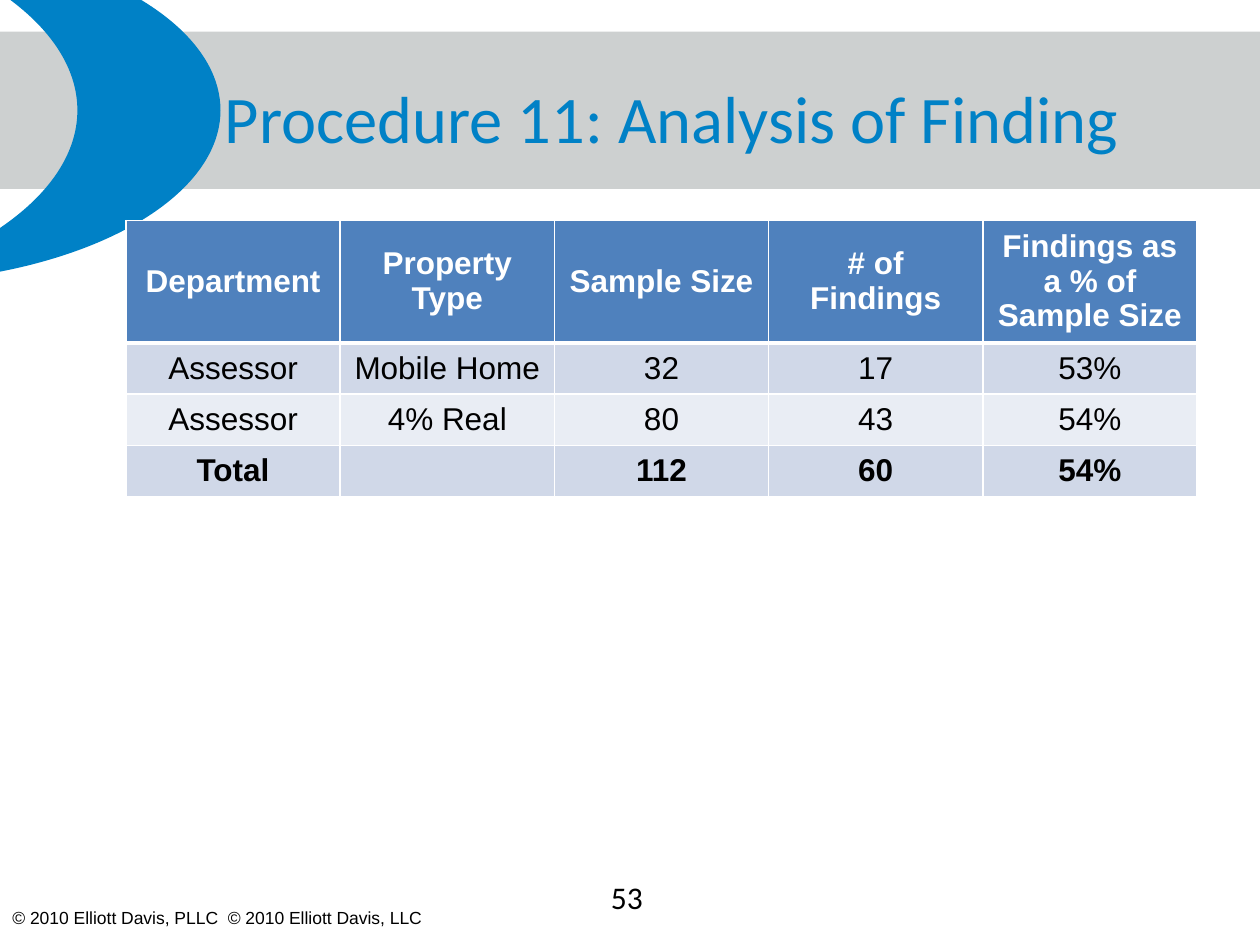
"""Build the Procedure 11 slide: a findings table under a banner with a crescent."""
from dataclasses import dataclass

from lxml.etree import SubElement
from pptx import Presentation
from pptx.dml.color import RGBColor as Rgb
from pptx.enum.shapes import MSO_SHAPE as Preset
from pptx.enum.text import MSO_ANCHOR as Anchor, PP_ALIGN as Align
from pptx.oxml.ns import qn
from pptx.util import Pt


@dataclass(frozen=True)
class Theme:
    banner: str = "C8CBCB"
    accent: str = "0081C6"
    header: str = "4F81BD"
    bands: tuple = ("D0D8E8", "E9EDF4")
    white: str = "FFFFFF"
    black: str = "000000"
    heading_font: str = "Calibri"
    body_font: str = "Arial"
    title_size: int = 38
    body_size: int = 18
    small_size: int = 10


theme = Theme()


def write(frame, text, *, font=theme.body_font, size=theme.body_size, color=theme.black,
          bold=False, align=Align.LEFT, anchor=Anchor.TOP, spacing=None, wrap=True):
    frame.word_wrap = wrap
    frame.vertical_anchor = anchor
    paragraph = frame.paragraphs[0]
    paragraph.alignment = align
    paragraph.line_spacing = spacing
    run = paragraph.add_run()
    run.text = text
    run.font.name, run.font.size, run.font.bold = font, Pt(size), bold
    run.font.color.rgb = Rgb.from_string(color)


def add_border(cell, side, width):
    line = SubElement(cell._tc.get_or_add_tcPr(), qn(f"a:ln{side}"), w=str(Pt(width)))
    SubElement(SubElement(line, qn("a:solidFill")), qn("a:srgbClr"), val=theme.white)


deck = Presentation()
deck.slide_width, deck.slide_height = Pt(720), Pt(540)
slide = deck.slides.add_slide(deck.slide_layouts[6])
shapes = slide.shapes

banner = shapes.add_shape(Preset.RECTANGLE, Pt(0), Pt(18), Pt(720), Pt(90))
crescent = shapes.add_shape(Preset.MOON, Pt(-72), Pt(-36), Pt(198), Pt(198))
for backdrop, color in ((banner, theme.banner), (crescent, theme.accent)):
    backdrop.shadow.inherit = False
    backdrop.fill.solid()
    backdrop.fill.fore_color.rgb = Rgb.from_string(color)
    backdrop.line.fill.background()
banner_color = banner.element.spPr.find(f".//{qn('a:srgbClr')}")
SubElement(banner_color, qn("a:alpha"), val="90000")
crescent.rotation = 180
crescent.adjustments[0] = 0.413

copyright_line = shapes.add_textbox(Pt(0), Pt(514.8), Pt(257.8), Pt(19.4))
write(copyright_line.text_frame, "© 2010 Elliott Davis, PLLC  © 2010 Elliott Davis, LLC",
      size=theme.small_size, wrap=False)

title = shapes.add_textbox(Pt(60), Pt(21.6), Pt(648), Pt(90))
write(title.text_frame, "Procedure 11: Analysis of Finding", font=theme.heading_font,
      size=theme.title_size, color=theme.accent, align=Align.CENTER, anchor=Anchor.MIDDLE)

findings = (
    ("Department", "Property Type", "Sample Size", "# of Findings",
     "Findings as a % of Sample Size"),
    ("Assessor", "Mobile Home", "32", "17", "53%"),
    ("Assessor", "4% Real", "80", "43", "54%"),
    ("Total", "", "112", "60", "54%"),
)
row_heights = (67.4, 29.2, 29.2, 29.2)
table = shapes.add_table(len(findings), len(findings[0]), Pt(72), Pt(126),
                         Pt(612), Pt(sum(row_heights))).table
for column in table.columns:
    column.width = Pt(612 / len(findings[0]))
for row, (entries, height) in enumerate(zip(findings, row_heights)):
    table.rows[row].height = Pt(height)
    is_header = row == 0
    for column, entry in enumerate(entries):
        cell = table.cell(row, column)
        for side, width in (("L", 1), ("R", 1), ("T", 3 if row == 1 else 1),
                            ("B", 3 if is_header else 1)):
            add_border(cell, side, width)
        cell.fill.solid()
        cell.fill.fore_color.rgb = Rgb.from_string(
            theme.header if is_header else theme.bands[(row - 1) % 2])
        cell.vertical_anchor = Anchor.MIDDLE
        if entry:
            write(cell.text_frame, entry, color=theme.white if is_header else theme.black,
                  bold=is_header or entries[0] == "Total", align=Align.CENTER,
                  anchor=None, spacing=0.97 if is_header else None)

page_number = shapes.add_textbox(Pt(342), Pt(498.2), Pt(36), Pt(28.8))
write(page_number.text_frame, "53", font=theme.heading_font)

deck.save("out.pptx")
